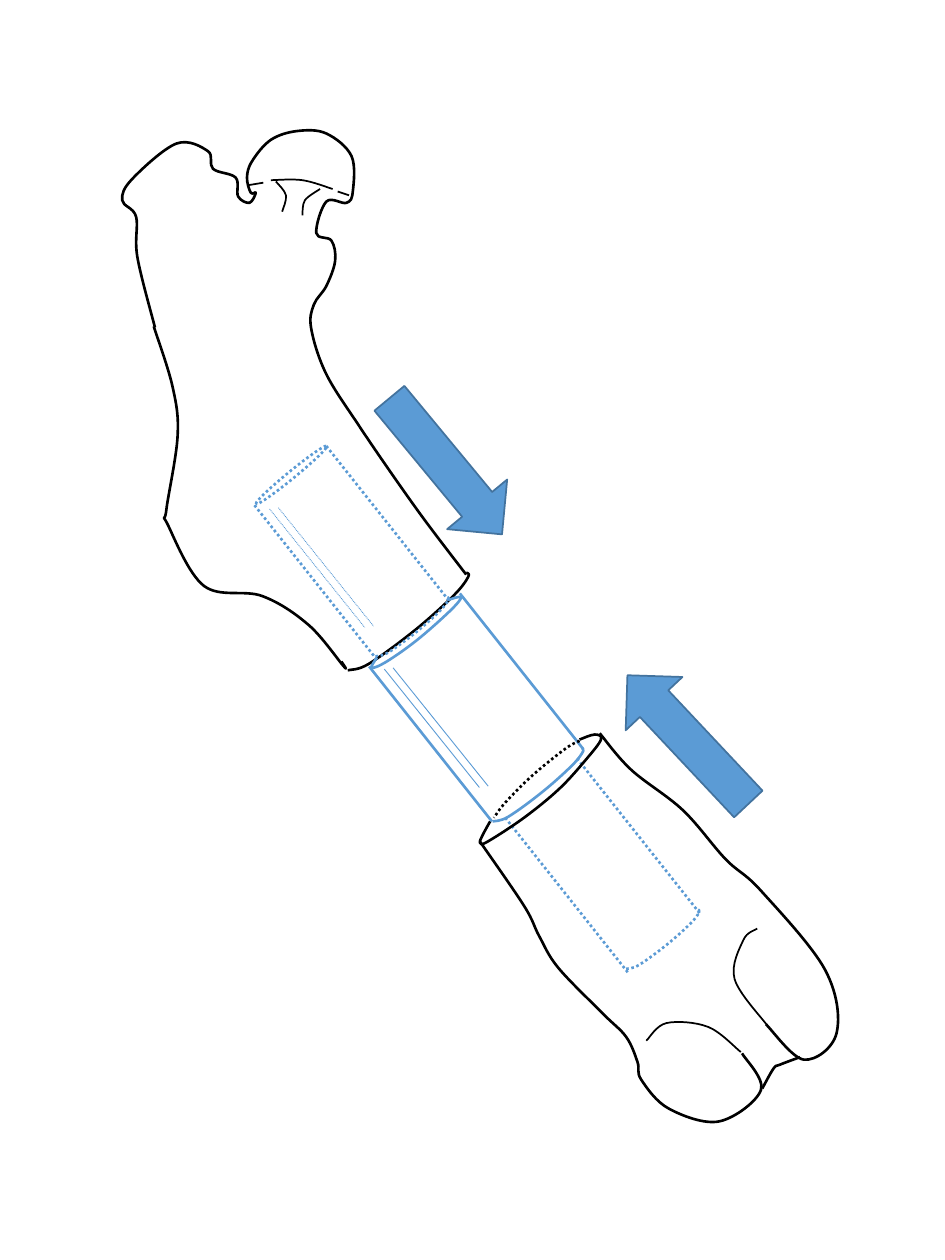
from dataclasses import dataclass
from math import cos, radians, sin

from lxml.etree import SubElement
from pptx import Presentation
from pptx.dml.color import RGBColor
from pptx.enum.dml import MSO_LINE
from pptx.enum.shapes import MSO_CONNECTOR, MSO_SHAPE
from pptx.oxml.ns import qn
from pptx.util import Cm, Pt


@dataclass(frozen=True)
class Theme:
    bone = RGBColor(0x00, 0x00, 0x00)
    implant = RGBColor(0x5B, 0x9B, 0xD5)
    arrow_edge = RGBColor(0x43, 0x73, 0x9E)
    thick = {"width": Pt(1.5)}
    thin = {"width": Pt(1)}
    hairline = {"width": Pt(0.5)}
    dotted = {"width": Pt(1.5), "dash_style": MSO_LINE.ROUND_DOT}
    dotted_hairline = {"width": Pt(0.5), "dash_style": MSO_LINE.ROUND_DOT}


THEME = Theme()
GRID = Cm(0.0254)  # drawing grid: one hundredth of an inch
UPPER_TURN, LOWER_TURN = 320.7, 318.1
RIM = [(0, 0), (10, -3), (32, -19), (51, -36), (58, -45), (57, -47)]


def style_line(shape, color, line_format):
    shape.line.color.rgb = color
    for name, value in line_format.items():
        setattr(shape.line, name, value)
    SubElement(shape.element.spPr, qn("a:effectLst"))


def add_curve(points, rotation, color, line_format):
    """Draw a smooth Catmull-Rom curve through the points, in a turned frame."""
    turn = complex(cos(radians(rotation)), sin(radians(rotation)))
    knots = [complex(x, y) * GRID / turn for x, y in points]
    padded = [knots[0], *knots, knots[-1]]
    chain = []
    for before, start, end, after in zip(padded, padded[1:], padded[2:], padded[3:]):
        chain += [start + (end - before) / 6, end - (after - start) / 6, end]
    builder = slide.shapes.build_freeform(knots[0].real, knots[0].imag)
    builder.add_line_segments([(p.real, p.imag) for p in chain], close=False)
    shape = builder.convert_to_shape()
    center = complex(shape.left + shape.width / 2, shape.top + shape.height / 2) * turn
    shape.left = round(center.real - shape.width / 2)
    shape.top = round(center.imag - shape.height / 2)
    shape.rotation = rotation
    shape.fill.background()
    style_line(shape, color, line_format)

    segments = list(shape.element.iter(qn("a:lnTo")))
    for first in range(0, len(segments), 3):
        path = segments[first].getparent()
        curve = SubElement(path, qn("a:cubicBezTo"))
        for segment in segments[first:first + 3]:
            curve.append(segment[0])
            path.remove(segment)
    return shape


presentation = Presentation()
presentation.slide_width, presentation.slide_height = Cm(19.05), Cm(25.4)
slide = presentation.slides.add_slide(presentation.slide_layouts[6])

# Upper bone
upper_bone = [
    ([(123, 260), (109, 204), (108, 172), (97, 159), (105, 142), (140, 114), (165, 120),
      (169, 134), (187, 141), (189, 156), (198, 161), (203, 153), (199, 153), (196, 141),
      (200, 128), (215, 111), (236, 104), (259, 106), (279, 124), (280, 152), (275, 161),
      (259, 160), (251, 185), (263, 191), (266, 207), (259, 227), (249, 242), (247, 261),
      (259, 297), (285, 338), (313, 379), (338, 414), (370, 456)], THEME.thick),
    ([(122, 259), (137, 307), (141, 346), (132, 405), (133, 416), (162, 465), (208, 473),
      (245, 496), (273, 529), (271, 525)], THEME.thick),
    ([(215, 143), (240, 143), (264, 150)], THEME.thin),
    ([(219, 144), (227, 155), (224, 168)], THEME.thin),
    ([(254, 150), (242, 159), (240, 171)], THEME.thin),
    ([(197, 147), (209, 145)], THEME.thin),
    ([(268, 152), (277, 155)], THEME.thin),
    ([(276 + 1.65 * x, 532 + 1.65 * y) for x, y in RIM], THEME.thick),
]
slide.shapes.add_group_shape(
    [add_curve(points, UPPER_TURN, THEME.bone, line_format) for points, line_format in upper_bone])

# Cylindrical implant
implant_top = slide.shapes.add_shape(MSO_SHAPE.OVAL, Cm(4.95), Cm(9.5), Cm(1.85), Cm(0.15))
implant_top.rotation = UPPER_TURN
implant_top.fill.background()
style_line(implant_top, THEME.implant, THEME.dotted)

for left, top, scale, line_format in [
    (497, 769, 1, THEME.dotted),
    (391, 652, 1.24, THEME.thick),
    (298, 521, 1, THEME.dotted),
]:
    points = [(left + scale * x, top + scale * y) for x, y in RIM]
    add_curve(points, UPPER_TURN, THEME.implant, line_format)

implant_collar = [(299, 522), (295, 530), (307, 525), (331, 508), (357, 485), (366, 474), (356, 476)]
add_curve(implant_collar, UPPER_TURN, THEME.implant, THEME.thick)

walls, highlights = (97.5, 123), (75.5, 94)
for (run, drop), line_format, starts in [
    (walls, THEME.dotted, [(202, 401), (401, 649), (259, 354), (458, 602)]),
    (walls, THEME.thick, [(293, 529), (365, 471)]),
    (highlights, THEME.hairline, [(305, 531), (312, 530)]),
    (highlights, THEME.dotted_hairline, [(214, 404), (221, 403)]),
]:
    for x, y in starts:
        ends = [round(value * GRID) for value in (x, y, x + run, y + drop)]
        connector = slide.shapes.add_connector(MSO_CONNECTOR.STRAIGHT, *ends)
        style_line(connector, THEME.implant, line_format)

# Lower bone
lower_bone = [
    ([(381, 668), (416, 719), (428, 743), (443, 768), (478, 804), (497, 823), (506, 843),
      (509, 857), (531, 880), (571, 890), (604, 865), (589, 836)], LOWER_TURN, THEME.thick),
    ([(608, 813), (638, 841), (664, 820), (655, 770), (604, 707), (576, 682), (542, 643),
      (501, 611), (476, 582)], LOWER_TURN, THEME.thick),
    ([(588, 835), (562, 815), (529, 812), (513, 826)], LOWER_TURN, THEME.thin),
    ([(609, 814), (583, 777), (590, 746), (601, 737)], LOWER_TURN, THEME.thin),
    ([(605, 864), (614, 848), (619, 845), (635, 839)], LOWER_TURN, THEME.thick),
    ([(460, 587), (472, 583), (477, 587), (465, 603), (444, 626), (416, 649), (387, 668),
      (381, 669), (383, 663), (389, 652)], 0, THEME.thick),
    ([(460, 588), (449, 594), (423, 615), (401, 637), (392, 649)], LOWER_TURN - 180, THEME.dotted),
]
for points, rotation, line_format in lower_bone:
    add_curve(points, rotation, THEME.bone, line_format)

# Arrows pushing the two bones together
for left, top, rotation in [(13.08, 13.13, 136.8), (8.2, 7.62, 320.4)]:
    arrow = slide.shapes.add_shape(MSO_SHAPE.DOWN_ARROW, Cm(left), Cm(top), Cm(1.57), Cm(3.56))
    arrow.rotation = rotation
    arrow.fill.solid()
    arrow.fill.fore_color.rgb = THEME.implant
    style_line(arrow, THEME.arrow_edge, THEME.thin)

presentation.save("out.pptx")
